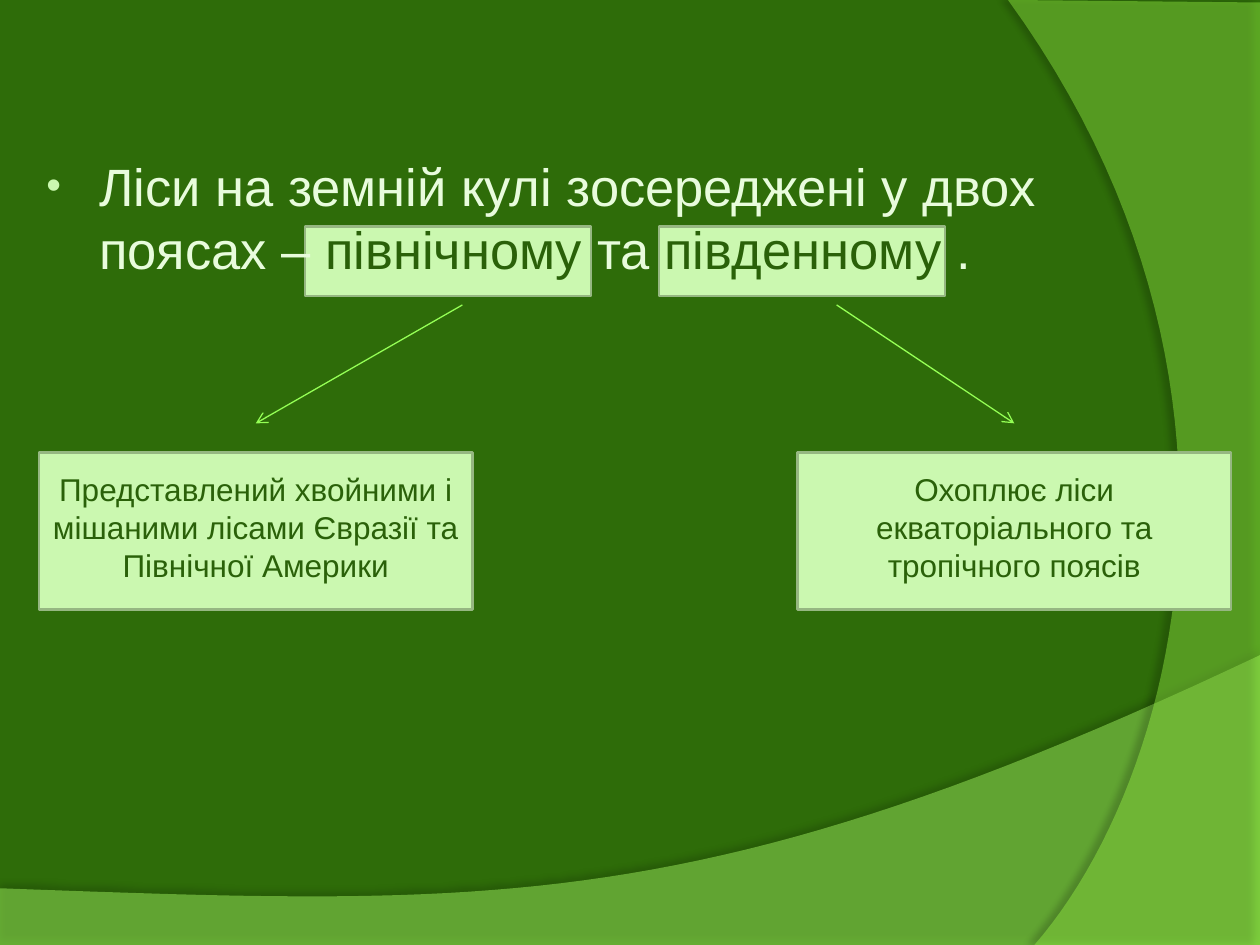
"""Builds a slide on the two forest belts of the Earth."""
from lxml.etree import SubElement
from pptx import Presentation
from pptx.dml.color import RGBColor
from pptx.enum.shapes import MSO_CONNECTOR, MSO_SHAPE
from pptx.enum.text import MSO_ANCHOR, PP_ALIGN
from pptx.oxml.ns import qn
from pptx.util import Inches, Pt

BACKGROUND = RGBColor(0x2E, 0x6C, 0x09)
WAVE = RGBColor(0xAB, 0xFF, 0x68)
ARC = RGBColor(0x9F, 0xFF, 0x4A)
PANEL = RGBColor(0xCB, 0xF8, 0xB0)
PANEL_LINE = RGBColor(0x96, 0xB7, 0x82)
ARROW = RGBColor(0x94, 0xFF, 0x55)
LIGHT_TEXT = RGBColor(0xE8, 0xFC, 0xDC)
DARK_TEXT = RGBColor(0x2A, 0x61, 0x09)
FONT = "Arial"

deck = Presentation()
deck.slide_width, deck.slide_height = Inches(10), Inches(7.5)
COLUMN, ROW = deck.slide_width / 100, deck.slide_height / 100
page = deck.slides.add_slide(deck.slide_layouts[6])
page.background.fill.solid()
page.background.fill.fore_color.rgb = BACKGROUND


def place(*cells):
    return [round(cell * (ROW if index % 2 else COLUMN)) for index, cell in enumerate(cells)]


def curve(start, first, second, end, steps=48):
    points = []
    for step in range(steps + 1):
        t = step / steps
        weights = ((1 - t) ** 3, 3 * t * (1 - t) ** 2, 3 * t * t * (1 - t), t ** 3)
        points.append([sum(w * p[axis] for w, p in zip(weights, (start, first, second, end)))
                       for axis in (0, 1)])
    return points


wave_outline = [(0, 94), (0, 100), (100, 100)]
wave_outline += curve((100, 69.33), (55.9, 97.2), (39.1, 95.87), (0, 94))
arc_outline = [(100, 0.27), (100, 100)]
arc_outline += curve((82.1, 100), (93.5, 82.53), (101.8, 40), (80, 0))
for outline, color, opacity, shade, distance, angle in (
    (wave_outline, WAVE, 45, 35, 3.5, 270),
    (arc_outline, ARC, 40, 45, 4, 180),
):
    points = [place(*point) for point in outline]
    builder = page.shapes.build_freeform(*points[0], scale=1.0)
    builder.add_line_segments(points[1:], close=True)
    sweep = builder.convert_to_shape()
    sweep.fill.solid()
    sweep.fill.fore_color.rgb = color
    sweep.line.fill.background()
    properties = sweep.element.spPr
    fill_color = properties.find(qn("a:solidFill"))[0]
    SubElement(fill_color, qn("a:alpha"), val=str(opacity * 1000))
    effects = SubElement(properties, qn("a:effectLst"))
    shadow = SubElement(effects, qn("a:outerShdw"), blurRad=str(Pt(4)),
                        dist=str(Pt(distance)), dir=str(angle * 60000), algn="ctr", rotWithShape="0")
    shadow_color = SubElement(shadow, qn("a:srgbClr"), val="000000")
    SubElement(shadow_color, qn("a:alpha"), val=str(shade * 1000))

for left, top, width, height, text in (
    (24.2, 24, 22.7, 7.33, ""),
    (52.3, 24, 22.7, 7.33, ""),
    (3.1, 47.87, 34.4, 16.67, "Представлений хвойними і мішаними лісами Євразії та Північної Америки"),
    (63.3, 47.87, 34.4, 16.67, "Охоплює ліси екваторіального та тропічного поясів"),
):
    panel = page.shapes.add_shape(MSO_SHAPE.RECTANGLE, *place(left, top, width, height))
    panel.shadow.inherit = False
    panel.fill.solid()
    panel.fill.fore_color.rgb = PANEL
    panel.line.color.rgb = PANEL_LINE
    panel.line.width = Pt(1.5)
    if text:
        frame = panel.text_frame
        frame.word_wrap = True
        frame.vertical_anchor = MSO_ANCHOR.MIDDLE
        frame.margin_bottom = round(1.6 * ROW)
        para = frame.paragraphs[0]
        para.text = text
        para.alignment = PP_ALIGN.CENTER
        para.font.name, para.font.size = FONT, Pt(18)
        para.font.color.rgb = DARK_TEXT

statement = page.shapes.add_textbox(*place(2.3, 15.6, 81.7, 66))
statement.text_frame.word_wrap = True
para = statement.text_frame.paragraphs[0]
indents = para._p.get_or_add_pPr()
indents.set("marL", str(round(4.6 * COLUMN)))
indents.set("indent", str(round(-4.2 * COLUMN)))
bullet_color = SubElement(indents, qn("a:buClr"))
SubElement(bullet_color, qn("a:srgbClr"), val=str(PANEL))
SubElement(indents, qn("a:buSzPct"), val="80000")
SubElement(indents, qn("a:buFont"), typeface=FONT)
SubElement(indents, qn("a:buChar"), char="•")
para.font.name, para.font.size = FONT, Pt(30)
for text, color in (
    ("Ліси на земній кулі зосереджені у двох поясах – ", LIGHT_TEXT),
    ("північному", DARK_TEXT),
    (" та ", LIGHT_TEXT),
    ("південному ", DARK_TEXT),
    (".", LIGHT_TEXT),
):
    span = para.add_run()
    span.text = text
    span.font.color.rgb = color

for start, end in ((36.7, 20.3), (66.4, 80.5)):
    arrow = page.shapes.add_connector(MSO_CONNECTOR.STRAIGHT, *place(start, 32.27, end, 44.8))
    arrow.line.color.rgb = ARROW
    arrow.line.width = Pt(0.75)
    SubElement(arrow.line._get_or_add_ln(), qn("a:tailEnd"), type="arrow")
    SubElement(arrow._element.spPr, qn("a:effectLst"))

deck.save("out.pptx")
